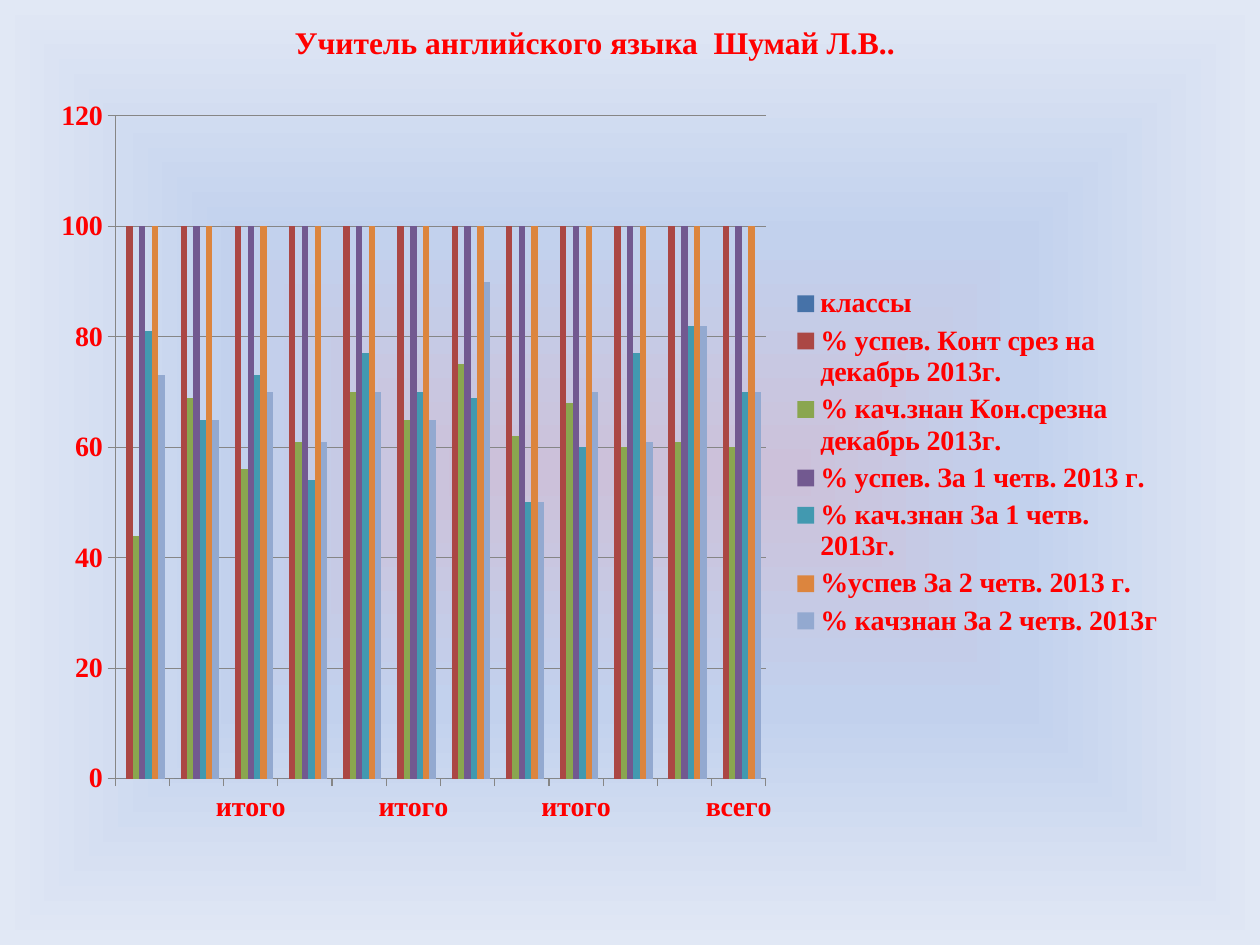
from pptx import Presentation
from pptx import util as u
from pptx.chart.data import CategoryChartData
from pptx.dml.color import RGBColor
from pptx.enum import chart as ch, text
from pptx.oxml import parse_xml
from pptx.oxml.ns import nsdecls, qn

COLORS = {"text": "FF0000", "line": "868686",
          "center": "CCC1DA", "middle": "C2D1ED", "edge": "E1E8F5"}
FONT = "Times New Roman"
CATEGORIES = ["", "", "итого"] * 3 + ["", "", "всего"]
FULL = [100] * 12
SERIES = [
    ("классы", "4672A8", [0, 0, None] * 4),
    ("% успев. Конт срез на декабрь 2013г.", "AB4744", FULL),
    ("% кач.знан Кон.срезна декабрь 2013г.", "8AA64F",
     [44, 69, 56, 61, 70, 65, 75, 62, 68, 60, 61, 60]),
    ("% успев. За 1 четв. 2013 г.", "725990", FULL),
    ("% кач.знан За 1 четв.  2013г.", "4299B0",
     [81, 65, 73, 54, 77, 70, 69, 50, 60, 77, 82, 70]),
    ("%успев За 2 четв. 2013 г.", "DC853E", FULL),
    ("% качзнан За 2 четв. 2013г", "93A9D0",
     [73, 65, 70, 61, 70, 65, 90, 50, 70, 61, 82, 70]),
]


def rgb(name):
    return RGBColor.from_string(COLORS[name])


def style_font(font, size):
    font.name = FONT
    font.size = u.Pt(size)
    font.bold = True
    font.color.rgb = rgb("text")


def style_line(line):
    line.color.rgb = rgb("line")
    line.width = u.Pt(0.75)


def add_background(s):
    """Gradient that spreads from the slide centre to its edges."""
    s.background.fill.gradient()
    old = s.element.find(".//" + qn("a:gradFill"))
    stops = "".join(
        f'<a:gs pos="{pos}"><a:srgbClr val="{COLORS[name]}"/></a:gs>'
        for pos, name in ((0, "center"), (50000, "middle"), (100000, "edge")))
    old.getparent().replace(old, parse_xml(
        f'<a:gradFill {nsdecls("a")} rotWithShape="1"><a:gsLst>{stops}</a:gsLst>'
        '<a:path path="shape"><a:fillToRect l="50000" t="50000" r="50000" b="50000"/>'
        '</a:path></a:gradFill>'))


def add_title(s, left, top, width, height):
    tf = s.shapes.add_textbox(left, top, width, height).text_frame
    tf.word_wrap = True
    tf.auto_size = text.MSO_AUTO_SIZE.SHAPE_TO_FIT_TEXT
    p = tf.paragraphs[0]
    p.text = "Учитель английского языка  Шумай Л.В.."
    style_font(p.font, 18)


def set_plot_layout(chart, x, y, w, h):
    """Place the inner plot area, in fractions of the chart."""
    area = chart.plots[0]._element.getparent()
    for old in area.findall(qn("c:layout")):
        area.remove(old)
    sizes = "".join(f'<c:{k} val="{v}"/>' for k, v in zip("xywh", (x, y, w, h)))
    area.insert(0, parse_xml(
        f'<c:layout {nsdecls("c")}><c:manualLayout><c:layoutTarget val="inner"/>'
        f'<c:xMode val="edge"/><c:yMode val="edge"/>{sizes}'
        '</c:manualLayout></c:layout>'))


def add_results_chart(s, left, top, width, height):
    data = CategoryChartData()
    data.categories = CATEGORIES
    for name, _, values in SERIES:
        data.add_series(name, values)
    chart = s.shapes.add_chart(ch.XL_CHART_TYPE.COLUMN_CLUSTERED,
                               left, top, width, height, data).chart
    chart.has_title = False
    chart.font.name = "Calibri"
    chart.font.size = u.Pt(10)

    plot = chart.plots[0]
    plot.gap_width = 150
    plot.vary_by_categories = False
    for series, (_, color, _) in zip(plot.series, SERIES):
        series.format.fill.solid()
        series.format.fill.fore_color.rgb = RGBColor.from_string(color)
        series.invert_if_negative = False

    for axis in (chart.category_axis, chart.value_axis):
        axis.major_tick_mark = ch.XL_TICK_MARK.OUTSIDE
        style_font(axis.tick_labels.font, 16)
        style_line(axis.format.line)
    axis = chart.value_axis
    axis.minimum_scale, axis.maximum_scale, axis.major_unit = 0, 120, 20
    axis.has_major_gridlines = True
    style_line(axis.major_gridlines.format.line)

    chart.has_legend = True
    chart.legend.position = ch.XL_LEGEND_POSITION.RIGHT
    chart.legend.include_in_layout = False
    style_font(chart.legend.font, 16)
    set_plot_layout(chart, 0.07, 0.04, 0.57, 0.88)


def main():
    prs = Presentation()
    prs.slide_width, prs.slide_height = u.Inches(10), u.Inches(7.5)
    s = prs.slides.add_slide(prs.slide_layouts[6])
    add_background(s)
    add_results_chart(s, u.Inches(0.28), u.Inches(0.68), u.Inches(9.06), u.Inches(5.98))
    add_title(s, u.Inches(2.24), u.Inches(0.13), u.Inches(5.83), u.Inches(0.4))
    prs.save("out.pptx")


if __name__ == "__main__":
    main()
